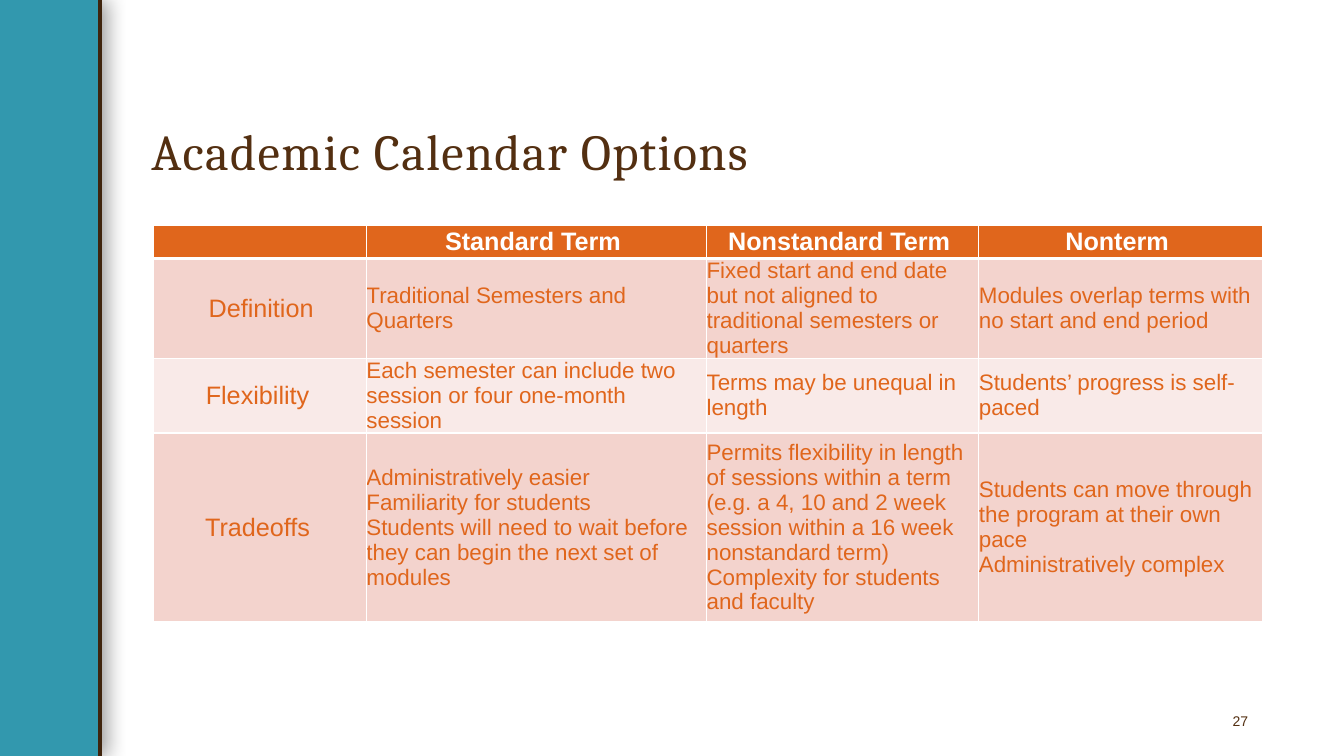
from lxml.etree import SubElement
from pptx import Presentation
from pptx.dml.color import RGBColor as RGB
from pptx.enum.shapes import MSO_CONNECTOR as Connector, MSO_SHAPE as Preset
from pptx.enum.text import MSO_ANCHOR as Anchor, MSO_AUTO_SIZE as AutoSize, PP_ALIGN as Align
from pptx.oxml import parse_xml
from pptx.oxml.ns import nsdecls, qn
from pptx.util import Pt

COLORS = {
    "teal": "3298AE", "dark": "3F240D", "brown": "532F11", "orange": "E0661C",
    "rose": "F3D3CD", "pale": "F9EAE8", "white": "FFFFFF", "black": "000000",
}
NO_MARGINS = {f"margin_{side}": 0 for side in ("left", "top", "right", "bottom")}
TITLE_FONT = {"name": "Cambria", "size": Pt(36), "bold": False}
NUMBER_FONT = {"name": "Arial", "size": Pt(10)}
HEADER_FONT = {"name": "Arial", "size": Pt(18), "bold": True}
LABEL_FONT = {"name": "Arial", "size": Pt(18), "bold": False}
BODY_FONT = {"name": "Arial", "size": Pt(16), "bold": False}

COLUMN_WIDTHS = (152, 243, 194.5, 202.5)
ROW_HEIGHTS = (24, 70.5, 53.5, 135)
ROW_FILLS = ("orange", "rose", "pale", "rose")
ROWS = (
    ("", "Standard Term ", "Nonstandard Term ", "Nonterm "),
    (
        "Definition",
        "Traditional Semesters and Quarters ",
        "Fixed start and end date but not aligned to traditional semesters or quarters",
        "Modules overlap terms with no start and end period ",
    ),
    (
        "Flexibility ",
        "Each semester can include two session or four one-month session",
        "Terms may be unequal in length ",
        "Students’ progress is self-paced ",
    ),
    (
        "Tradeoffs ",
        "Administratively easier \nFamiliarity for students \n"
        "Students will need to wait before they can begin the next set of modules ",
        "Permits flexibility in length of sessions within a term "
        "(e.g. a 4, 10 and 2 week session within a 16 week nonstandard term)\n"
        "Complexity for students and faculty",
        "Students can move through the program at their own pace \nAdministratively complex",
    ),
)


def color(name):
    return RGB.from_string(COLORS[name])


def apply(target, values):
    for name, value in values.items():
        setattr(target, name, value)


def write(frame, text, font, font_color, align):
    frame.text = text
    for paragraph in frame.paragraphs:
        paragraph.alignment = align
        for run in paragraph.runs:
            apply(run.font, font)
            run.font.color.rgb = color(font_color)


def add_side_band(slide):
    band = slide.shapes.add_shape(Preset.RECTANGLE, 0, 0, Pt(72.7), Pt(540))
    band.fill.solid()
    band.fill.fore_color.rgb = color("teal")
    band.line.fill.background()
    band._element.spPr.append(parse_xml(
        f'<a:effectLst {nsdecls("a")}>'
        f'<a:outerShdw blurRad="{Pt(15)}" dist="{Pt(3)}" dir="0" algn="l" rotWithShape="0">'
        f'<a:srgbClr val="{COLORS["black"]}"><a:alpha val="40000"/></a:srgbClr>'
        '</a:outerShdw></a:effectLst>'
    ))
    edge = slide.shapes.add_connector(Connector.STRAIGHT, Pt(71.5), Pt(540), Pt(71.5), 0)
    edge.line.color.rgb = color("dark")
    edge.line.width = Pt(3)
    SubElement(edge._element.spPr, qn("a:effectLst"))


def add_title(slide, text):
    title = slide.shapes.title
    apply(title, {"left": Pt(101), "top": Pt(29), "width": Pt(791), "height": Pt(104.5)})
    frame = title.text_frame
    apply(frame, {"word_wrap": True, "auto_size": AutoSize.NONE, "vertical_anchor": Anchor.BOTTOM})
    write(frame, text, TITLE_FONT, "brown", Align.LEFT)
    paragraph = frame.paragraphs[0]
    apply(paragraph, {"line_spacing": 0.9, "space_after": Pt(6)})
    paragraph.runs[0].font._element.set("spc", "100")


def add_slide_number(slide, number):
    frame = slide.shapes.add_textbox(Pt(675.5), Pt(500.5), Pt(216), Pt(29)).text_frame
    apply(frame, {"word_wrap": True, "vertical_anchor": Anchor.MIDDLE, "margin_right": 0})
    write(frame, number, NUMBER_FONT, "brown", Align.RIGHT)


def set_borders(cell, widths):
    properties = cell._tc.get_or_add_tcPr()
    for side, width in zip("LRTB", widths):
        line = SubElement(properties, qn(f"a:ln{side}"), w=str(Pt(width)))
        fill = SubElement(line, qn("a:solidFill"))
        SubElement(fill, qn("a:srgbClr"), val=COLORS["white"])


def format_cell(cell, text, row, column):
    set_borders(cell, (1, 1, 3 if row == 1 else 1, 3 if row == 0 else 1))
    cell.fill.solid()
    cell.fill.fore_color.rgb = color(ROW_FILLS[row])
    apply(cell, {**NO_MARGINS, "vertical_anchor": Anchor.MIDDLE})
    if row == 0:
        write(cell.text_frame, text, HEADER_FONT, "white", Align.CENTER)
    elif column == 0:
        write(cell.text_frame, text, LABEL_FONT, "orange", Align.CENTER)
        cell.text_frame.paragraphs[0]._p.get_or_add_pPr().set("marL", str(Pt(1.5)))
    else:
        write(cell.text_frame, text, BODY_FONT, "orange", Align.LEFT)


def add_options_table(slide):
    table = slide.shapes.add_table(
        len(ROWS), len(COLUMN_WIDTHS), Pt(109.75), Pt(160.75),
        Pt(sum(COLUMN_WIDTHS)), Pt(sum(ROW_HEIGHTS)),
    ).table
    for column, width in zip(table.columns, COLUMN_WIDTHS):
        column.width = Pt(width)
    for row, height in zip(table.rows, ROW_HEIGHTS):
        row.height = Pt(height)
    for row, texts in enumerate(ROWS):
        for column, text in enumerate(texts):
            format_cell(table.cell(row, column), text, row, column)


def main():
    presentation = Presentation()
    apply(presentation, {"slide_width": Pt(960), "slide_height": Pt(540)})
    slide = presentation.slides.add_slide(presentation.slide_layouts[5])
    add_side_band(slide)
    add_title(slide, "Academic Calendar Options")
    add_options_table(slide)
    add_slide_number(slide, "27")
    presentation.save("out.pptx")


if __name__ == "__main__":
    main()
